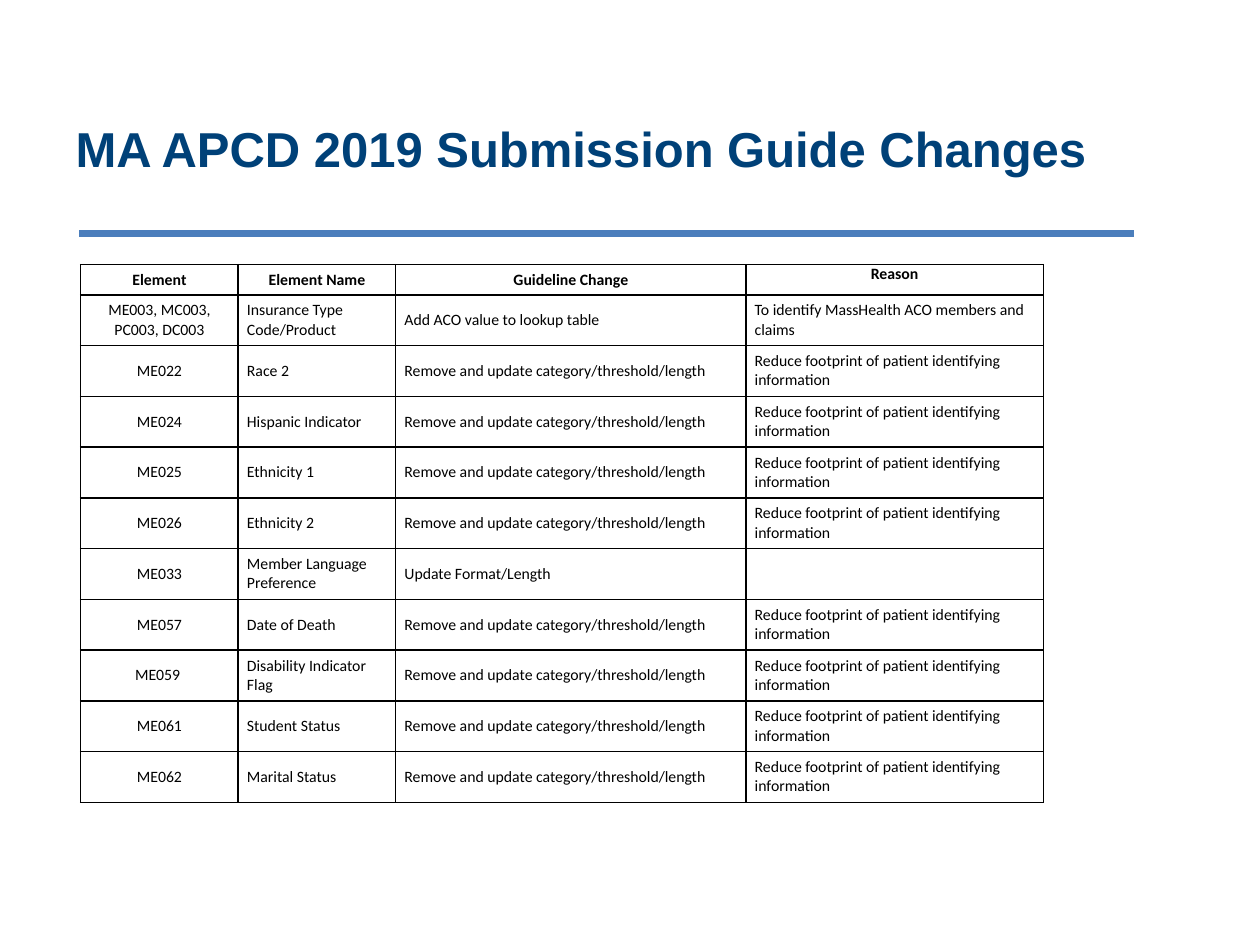
from dataclasses import dataclass

from lxml import etree
from pptx import Presentation
from pptx.dml.color import RGBColor
from pptx.enum.shapes import MSO_CONNECTOR
from pptx.enum.text import MSO_ANCHOR, PP_ALIGN
from pptx.oxml.ns import qn
from pptx.util import Inches, Pt

LEFT, CENTER = PP_ALIGN.LEFT, PP_ALIGN.CENTER
TOP, MIDDLE = MSO_ANCHOR.TOP, MSO_ANCHOR.MIDDLE
STRAIGHT = MSO_CONNECTOR.STRAIGHT


@dataclass(frozen=True)
class Theme:
    navy: str = "004178"
    blue: str = "4B7EBC"
    black: str = "000000"
    head_font: str = "Arial"
    body_font: str = "Calibri"
    head_size: int = 28
    body_size: int = 9
    rule: int = 4
    border: int = 1


THEME = Theme()
TITLE = "MA APCD 2019 Submission Guide Changes"
REMOVE = "Remove and update category/threshold/length"
REDUCE = "Reduce footprint of patient identifying information"
HEAD = ("Element", "Element Name", "Guideline Change", "Reason")
ROWS = [
    ("ME003, MC003, PC003, DC003", "Insurance Type Code/Product",
     "Add ACO value to lookup table",
     "To identify MassHealth ACO members and claims"),
    ("ME022", "Race 2", REMOVE, REDUCE),
    ("ME024", "Hispanic Indicator", REMOVE, REDUCE),
    ("ME025", "Ethnicity 1", REMOVE, REDUCE),
    ("ME026", "Ethnicity 2", REMOVE, REDUCE),
    ("ME033", "Member Language Preference", "Update Format/Length", ""),
    ("ME057", "Date of Death", REMOVE, REDUCE),
    ("ME059 ", "Disability Indicator Flag", REMOVE, REDUCE),
    ("ME061", "Student Status", REMOVE, REDUCE),
    ("ME062", "Marital Status", REMOVE, REDUCE),
]
WIDTHS = (1.25, 1.25, 2.78, 2.36)
HEAD_HIGH = 0.24


def style(para, name, size, color, bold, align):
    para.alignment = align
    font = para.font
    font.name, font.size, font.bold = name, Pt(size), bold
    font.color.rgb = RGBColor.from_string(color)


def add_title(slide, text, left, top, width, height):
    title = slide.shapes.title
    title.left, title.top = Inches(left), Inches(top)
    title.width, title.height = Inches(width), Inches(height)
    frame = title.text_frame
    frame.text = text
    frame.word_wrap = True
    frame.vertical_anchor = MIDDLE
    style(frame.paragraphs[0], THEME.head_font, THEME.head_size,
          THEME.navy, True, LEFT)


def add_rule(slide, left, top, width):
    rule = slide.shapes.add_connector(
        STRAIGHT, Inches(left), Inches(top), Inches(left + width), Inches(top))
    rule.line.color.rgb = RGBColor.from_string(THEME.blue)
    rule.line.width = Pt(THEME.rule)
    etree.SubElement(rule._element.spPr, qn("a:effectLst"))


def add_border(cell):
    props = cell._tc.get_or_add_tcPr()
    for side in ("lnL", "lnR", "lnT", "lnB"):
        line = etree.SubElement(props, qn(f"a:{side}"), w=str(Pt(THEME.border)))
        fill = etree.SubElement(line, qn("a:solidFill"))
        etree.SubElement(fill, qn("a:srgbClr"), val=THEME.black)


def fill_cell(cell, text, bold, align, anchor):
    add_border(cell)
    cell.fill.background()
    cell.margin_left = cell.margin_right = Inches(0.07)
    cell.margin_top = cell.margin_bottom = 0
    cell.vertical_anchor = anchor
    cell.text = text
    style(cell.text_frame.paragraphs[0], THEME.body_font, THEME.body_size,
          THEME.black, bold, align)


def add_changes(slide, left, top, width, height):
    lines = [HEAD, *ROWS]
    table = slide.shapes.add_table(
        len(lines), len(HEAD), Inches(left), Inches(top),
        Inches(width), Inches(height)).table
    table.horz_banding = False
    for col, share in zip(table.columns, WIDTHS):
        col.width = Inches(width * share / sum(WIDTHS))
    row_high = (height - HEAD_HIGH) / len(ROWS)
    for r, line in enumerate(lines):
        head = r == 0
        table.rows[r].height = Inches(HEAD_HIGH if head else row_high)
        for c, text in enumerate(line):
            align = CENTER if head or c == 0 else LEFT
            anchor = TOP if head and text == "Reason" else MIDDLE
            fill_cell(table.cell(r, c), text, head, align, anchor)


def main():
    deck = Presentation()
    deck.slide_width, deck.slide_height = Inches(10), Inches(7.5)
    slide = deck.slides.add_slide(deck.slide_layouts.get_by_name("Title Only"))
    add_rule(slide, 0.63, 1.85, 8.37)
    add_title(slide, TITLE, 0.5, 0.62, 8.5, 1.11)
    add_changes(slide, 0.64, 2.1, 7.64, 4.27)
    deck.save("out.pptx")


if __name__ == "__main__":
    main()
